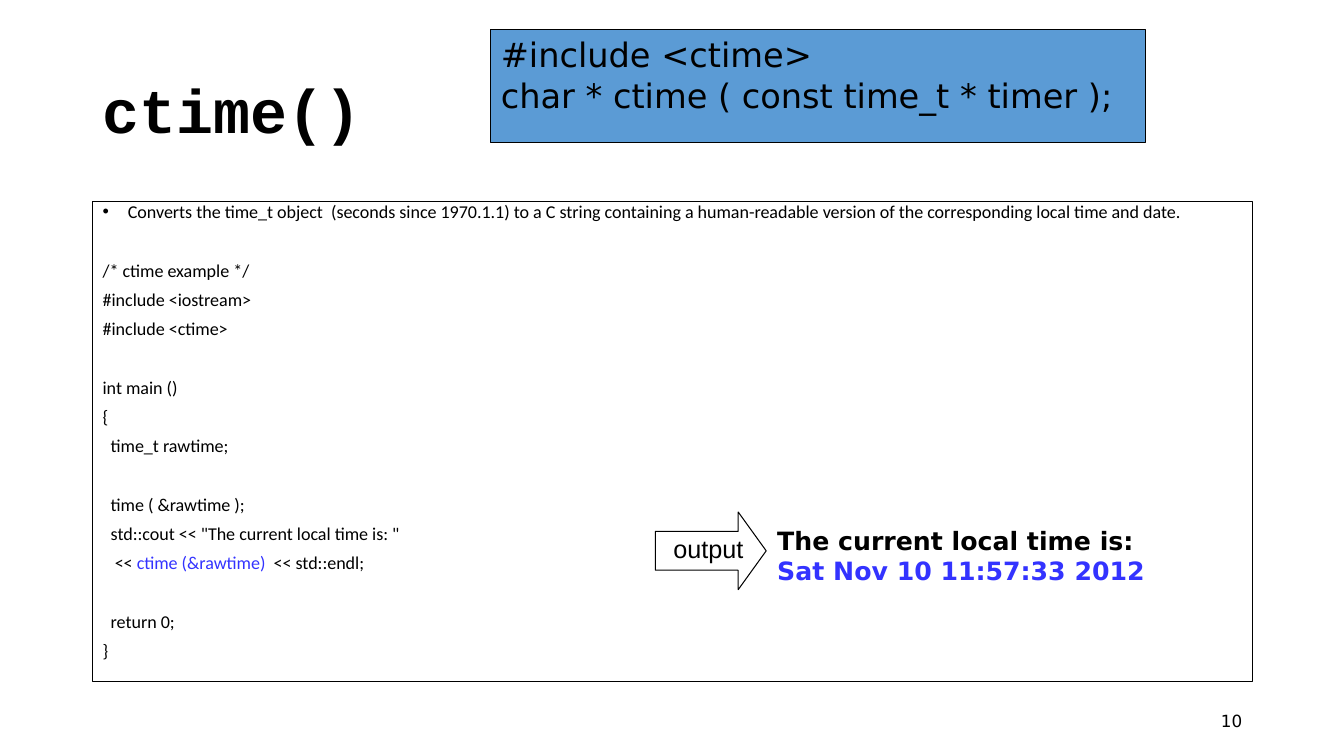
from dataclasses import dataclass

from lxml import etree
from pptx import Presentation, util as u
from pptx.dml.color import RGBColor
from pptx.enum import shapes, text
from pptx.oxml import ns

BLACK = RGBColor(0x00, 0x00, 0x00)
BLUE = RGBColor(0x33, 0x33, 0xFF)
PANEL = RGBColor(0x5B, 0x9B, 0xD5)

WIDTH, HEIGHT = u.Inches(13.33), u.Inches(7.5)
CODE_SIZE = 12.9
LINE_GAP, BLOCK_GAP = 10, 31
INDENT_STEP = 0.04


@dataclass
class Box:
    """Position and size in percent of the slide."""
    x: float
    y: float
    w: float
    h: float

    def emu(self) -> tuple:
        return (int(WIDTH * self.x / 100), int(HEIGHT * self.y / 100),
                int(WIDTH * self.w / 100), int(HEIGHT * self.h / 100))


@dataclass
class Font:
    name: str
    size: float
    bold: bool = False


@dataclass
class Piece:
    text: str
    color: RGBColor = BLACK


@dataclass
class Line:
    pieces: list[Piece]
    indent: int = 0
    new_block: bool = False


@dataclass
class Label:
    box: Box
    lines: list[Line]
    font: Font
    anchor: text.MSO_ANCHOR = text.MSO_ANCHOR.TOP
    align: text.PP_ALIGN = text.PP_ALIGN.LEFT
    spacing: float = 1.0


def line(content: str, indent: int = 0, new_block: bool = False) -> Line:
    return Line([Piece(content)], indent, new_block)


def write(tf, lines: list[Line], font: Font, align=text.PP_ALIGN.LEFT, spacing: float = 1.0) -> None:
    tf.word_wrap = True
    tf.text = "\n".join(item.pieces[0].text for item in lines)
    for p, item in zip(tf.paragraphs, lines):
        p.alignment, p.line_spacing = align, spacing
        for piece in item.pieces[1:]:
            p.add_run().text = piece.text
        for r, piece in zip(p.runs, item.pieces):
            r.font.name, r.font.size, r.font.bold = font.name, u.Pt(font.size), font.bold
            r.font.color.rgb = piece.color


def add_label(s, label: Label) -> None:
    tf = s.shapes.add_textbox(*label.box.emu()).text_frame
    write(tf, label.lines, label.font, label.align, label.spacing)
    tf.vertical_anchor = label.anchor


def add_outlined(s, kind: shapes.MSO_SHAPE, box: Box, fill: RGBColor | None = None):
    sp = s.shapes.add_shape(kind, *box.emu())
    sp.shadow.inherit = False
    if fill is None:
        sp.fill.background()
    else:
        sp.fill.solid()
        sp.fill.fore_color.rgb = fill
    sp.line.color.rgb = BLACK
    sp.line.width = u.Pt(0.75)
    sp.text_frame.vertical_anchor = text.MSO_ANCHOR.TOP
    return sp


def add_bullet(p) -> None:
    pPr = p._p.get_or_add_pPr()
    pPr.set("marL", str(u.Inches(0.25)))
    pPr.set("indent", str(-u.Inches(0.25)))
    etree.SubElement(pPr, ns.qn("a:buFont")).set("typeface", "Arial")
    etree.SubElement(pPr, ns.qn("a:buChar")).set("char", "•")


def add_code(s, box: Box, lines: list[Line]) -> None:
    tf = add_outlined(s, shapes.MSO_SHAPE.RECTANGLE, box).text_frame
    write(tf, lines, Font("Calibri", CODE_SIZE), spacing=0.7)
    for p, item in zip(tf.paragraphs, lines):
        p.space_before = u.Pt(BLOCK_GAP if item.new_block else LINE_GAP)
        p._p.get_or_add_pPr().set("marL", str(u.Inches(INDENT_STEP * item.indent)))
    add_bullet(tf.paragraphs[0])


CODE = [
    line("Converts the time_t object  (seconds since 1970.1.1) to a C string containing "
         "a human-readable version of the corresponding local time and date."),
    line("/* ctime example */", new_block=True),
    line("#include <iostream>"),
    line("#include <ctime>"),
    line("int main ()", new_block=True),
    line("{"),
    line("time_t rawtime;", 2),
    line("time ( &rawtime );", 2, True),
    line('std::cout << "The current local time is: "', 2),
    Line([Piece("<< "), Piece("ctime (&rawtime)", BLUE), Piece("  << std::endl;")], 3),
    line("return 0;", 2, True),
    line("}"),
]
PROTOTYPE = [line("#include <ctime>"), line("char * ctime ( const time_t * timer );")]
RESULT = [Line([Piece("The current local time is: "), Piece("Sat Nov 10 11:57:33 2012", BLUE)])]

LABELS = [
    Label(Box(6.9, 5.33, 86.27, 19.33), [line("ctime()")], Font("Courier New", 44, True),
          text.MSO_ANCHOR.MIDDLE, spacing=0.9),
    Label(Box(70.67, 92.67, 22.5, 5.33), [line("10")], Font("DejaVu Sans", 12),
          text.MSO_ANCHOR.MIDDLE, text.PP_ALIGN.RIGHT),
    Label(Box(57.09, 68.8, 30.46, 9.47), RESULT, Font("DejaVu Sans", 18, True)),
    Label(Box(49.36, 69.87, 8.85, 5.33), [line("output")], Font("Arial", 18)),
]


def main() -> None:
    prs = Presentation()
    prs.slide_width, prs.slide_height = WIDTH, HEIGHT
    s = prs.slides.add_slide(prs.slide_layouts[6])
    add_code(s, Box(6.9, 26.67, 86.27, 63.47), CODE)
    panel = add_outlined(s, shapes.MSO_SHAPE.RECTANGLE, Box(36.53, 3.87, 48.69, 14.93), PANEL)
    write(panel.text_frame, PROTOTYPE, Font("DejaVu Sans", 24))
    arrow = add_outlined(s, shapes.MSO_SHAPE.RIGHT_ARROW, Box(48.76, 67.73, 8.25, 10.27))
    arrow.adjustments[1] = 0.36
    for label in LABELS:
        add_label(s, label)
    prs.save("out.pptx")


if __name__ == "__main__":
    main()
